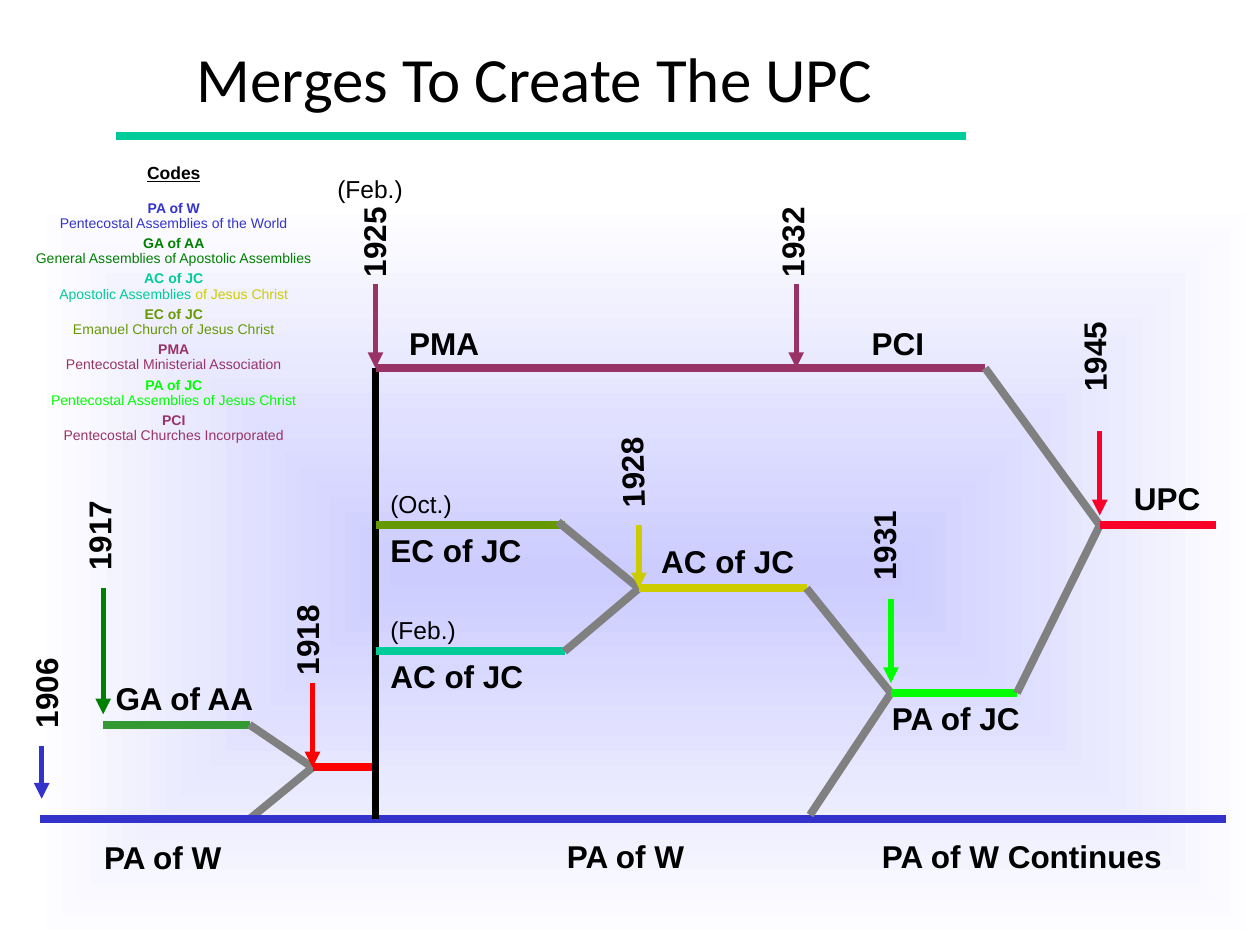
import dataclasses

import lxml.etree
import pptx
import pptx.dml.color
import pptx.enum.dml
import pptx.enum.shapes
import pptx.enum.text
import pptx.oxml
import pptx.oxml.ns
import pptx.util

Cm = pptx.util.Cm
Pt = pptx.util.Pt
ALIGN = pptx.enum.text.PP_ALIGN
ANCHOR = pptx.enum.text.MSO_ANCHOR


@dataclasses.dataclass(frozen=True)
class Theme:
    """Colours, fonts, type sizes and line widths of the slide."""
    black: str = "000000"
    white: str = "FFFFFF"
    glow: str = "CCCCFF"
    grey: str = "808080"
    blue: str = "3333CC"
    green: str = "008000"
    leaf: str = "339933"
    teal: str = "00CC99"
    yellow: str = "CCCC00"
    olive: str = "669900"
    plum: str = "993366"
    lime: str = "00FF00"
    red: str = "FF0000"
    crimson: str = "F80029"
    title_font: str = "Calibri"
    body_font: str = "Arial"
    title: int = 36
    label: int = 18
    month: int = 14
    heading: int = 10
    code: int = 8
    track: float = 4.5
    arrow: float = 3


T = Theme()

TRACKS = [
    (T.teal, 2.34, 2.74, 19.48, 2.74),
    (T.leaf, 2.08, 14.61, 5.03, 14.61),
    (T.grey, 5.03, 14.61, 6.3, 15.47),
    (T.grey, 5.03, 16.51, 6.3, 15.47),
    (T.blue, 0.81, 16.51, 24.71, 16.51),
    (T.red, 6.3, 15.47, 7.57, 15.47),
    (T.black, 7.57, 7.42, 7.57, 16.51),
    (T.plum, 7.57, 7.42, 19.86, 7.42),
    (T.olive, 7.57, 10.59, 11.38, 10.59),
    (T.teal, 7.57, 13.13, 11.38, 13.13),
    (T.grey, 11.25, 10.52, 12.88, 11.86),
    (T.grey, 11.38, 13.13, 12.88, 11.86),
    (T.yellow, 12.88, 11.86, 16.26, 11.86),
    (T.grey, 16.26, 11.86, 17.96, 13.97),
    (T.grey, 16.33, 16.43, 17.96, 13.97),
    (T.lime, 17.96, 13.97, 20.5, 13.97),
    (T.grey, 19.86, 7.42, 22.17, 10.59),
    (T.grey, 22.17, 10.59, 20.5, 13.97),
    (T.crimson, 22.17, 10.59, 24.51, 10.59),
]

ARROWS = [
    (T.plum, 16.05, 5.72, 7.42),
    (T.crimson, 22.17, 8.69, 10.39),
    (T.green, 2.08, 11.86, 14.4),
    (T.red, 6.3, 13.77, 15.47),
    (T.yellow, 12.88, 10.59, 11.86),
    (T.lime, 17.96, 12.07, 13.77),
    (T.plum, 7.57, 5.72, 7.42),
    (T.blue, 0.84, 15.04, 16.1),
]

LABELS = [
    ("PMA", 8, 6.4, 2.11),
    ("PCI", 17.32, 6.4, 1.91),
    ("UPC", 22.61, 9.53, 2.11),
    ("GA of AA", 2.08, 13.56, 3.61),
    ("PA of W", 1.85, 16.76, 3.61),
    ("PA of W", 11.18, 16.74, 3.61),
    ("PA of W Continues", 17.53, 16.74, 6.55),
    ("EC of JC", 7.62, 10.59, 3.61),
    ("AC of JC", 7.62, 13.13, 3.61),
    ("AC of JC", 13.08, 10.8, 3.61),
    ("PA of JC", 17.73, 13.97, 3.61),
]

YEARS = [
    ("1906", -0.56, 13.46, 270),
    ("1917", 0.51, 10.29, 270),
    ("1918", 4.7, 12.4, 270),
    ("1925", 6.05, 4.37, 270),
    ("1928", 11.25, 9.02, 268.3),
    ("1931", 16.33, 10.49, 270),
    ("1932", 14.48, 4.37, 270),
    ("1945", 20.57, 6.68, 269.5),
]

MONTHS = [("(Oct.)", 7.62, 9.73), ("(Feb.)", 7.62, 12.27), ("(Feb.)", 6.55, 3.38)]

CODES = [
    ("PA of W", [("Pentecostal Assemblies of the World", T.blue)]),
    ("GA of AA", [("General Assemblies of Apostolic Assemblies", T.green)]),
    ("AC of JC", [("Apostolic Assemblies ", T.teal), ("of Jesus Christ", T.yellow)]),
    ("EC of JC", [("Emanuel Church of Jesus Christ", T.olive)]),
    ("PMA", [("Pentecostal Ministerial Association", T.plum)]),
    ("PA of JC", [("Pentecostal Assemblies of Jesus Christ", T.lime)]),
    ("PCI", [("Pentecostal Churches Incorporated", T.plum)]),
]


def rgb(value):
    """Turn a hex string into a colour."""
    return pptx.dml.color.RGBColor.from_string(value)


def set_format(obj, values):
    """Set each attribute named in a dict of format values."""
    for name, value in values.items():
        setattr(obj, name, value)


def add_run(p, text, size, color=T.black, font=T.body_font, **fmt):
    """Add a formatted run to a paragraph."""
    r = p.add_run()
    r.text = text
    set_format(r.font, {"name": font, "size": Pt(size), **fmt})
    r.font.color.rgb = rgb(color)


def add_box(s, left, top, width, height, rotation=0):
    """Add a wrapping text box and return its text frame."""
    sp = s.shapes.add_textbox(Cm(left), Cm(top), Cm(width), Cm(height))
    sp.rotation = rotation
    sp.text_frame.word_wrap = True
    return sp.text_frame


def add_label(s, text, left, top, width, height=1.02, size=T.label,
              bold=True, align=ALIGN.LEFT, rotation=0):
    """Add a one-line label."""
    p = add_box(s, left, top, width, height, rotation).paragraphs[0]
    p.alignment = align
    add_run(p, text, size, bold=bold)


def add_line(s, color, x1, y1, x2, y2, width=T.track, arrow=False):
    """Add a straight line, with an arrowhead at its end if asked."""
    sp = s.shapes.add_connector(pptx.enum.shapes.MSO_CONNECTOR.STRAIGHT,
                                Cm(x1), Cm(y1), Cm(x2), Cm(y2))
    sp.line.width = Pt(width)
    sp.line.color.rgb = rgb(color)
    qn = pptx.oxml.ns.qn
    if arrow:
        ln = sp.line._get_or_add_ln()
        lxml.etree.SubElement(ln, qn("a:tailEnd"), type="triangle")
    lxml.etree.SubElement(sp._element.spPr, qn("a:effectLst"))


def add_glow(s):
    """Add the backdrop that fades from its centre to its edges."""
    sp = s.shapes.add_shape(pptx.enum.shapes.MSO_SHAPE.RECTANGLE,
                            Cm(0.64), Cm(4.01), Cm(24.76), Cm(15.04))
    sp.shadow.inherit = False
    sp.line.fill.background()
    sp.fill.gradient()
    for stop, color in zip(sp.fill.gradient_stops, (T.glow, T.white)):
        stop.color.rgb = rgb(color)
    qn = pptx.oxml.ns.qn
    grad = sp._element.spPr.find(qn("a:gradFill"))
    shade = lxml.etree.Element(qn("a:path"), {"path": "shape"})
    lxml.etree.SubElement(shade, qn("a:fillToRect"),
                          dict.fromkeys("ltrb", "50000"))
    grad.replace(grad.find(qn("a:lin")), shade)


def add_title(s, text):
    """Place and format the title."""
    sp = s.shapes.title
    set_format(sp, {"left": Cm(0.58), "top": Cm(0.38),
                    "width": Cm(20.4), "height": Cm(2.36)})
    sp.text_frame.vertical_anchor = ANCHOR.MIDDLE
    p = sp.text_frame.paragraphs[0]
    p.alignment = ALIGN.CENTER
    add_run(p, text, T.title, font=T.title_font)


def add_codes(s):
    """Add the key to the abbreviations."""
    tf = add_box(s, 0.43, 3.18, 6.15, 5.89)
    p = tf.paragraphs[0]
    set_format(p, {"alignment": ALIGN.CENTER, "line_spacing": 0.9, "space_after": Pt(10.4)})
    add_run(p, "Codes", T.heading, bold=True, underline=True)
    for code, parts in CODES:
        for runs, bold, gap in (([(code, parts[0][1])], True, 0), (parts, False, 3)):
            p = tf.add_paragraph()
            set_format(p, {"alignment": ALIGN.CENTER, "line_spacing": 0.9, "space_after": Pt(gap)})
            for text, color in runs:
                add_run(p, text, T.code, color, bold=bold)


def main():
    """Build the slide and save it."""
    prs = pptx.Presentation()
    set_format(prs, {"slide_width": Cm(25.4), "slide_height": Cm(19.05)})
    s = prs.slides.add_slide(prs.slide_layouts[5])
    add_glow(s)
    add_title(s, "Merges To Create The UPC")
    add_codes(s)
    for track in TRACKS:
        add_line(s, *track)
    for color, x, top, bottom in ARROWS:
        add_line(s, color, x, top, x, bottom, T.arrow, True)
    for label in LABELS:
        add_label(s, *label)
    for text, left, top, rotation in YEARS:
        add_label(s, text, left, top, 2.97, align=ALIGN.CENTER, rotation=rotation)
    for text, left, top in MONTHS:
        add_label(s, text, left, top, 2.54, 0.84, T.month, False)
    prs.save("out.pptx")


if __name__ == "__main__":
    main()
